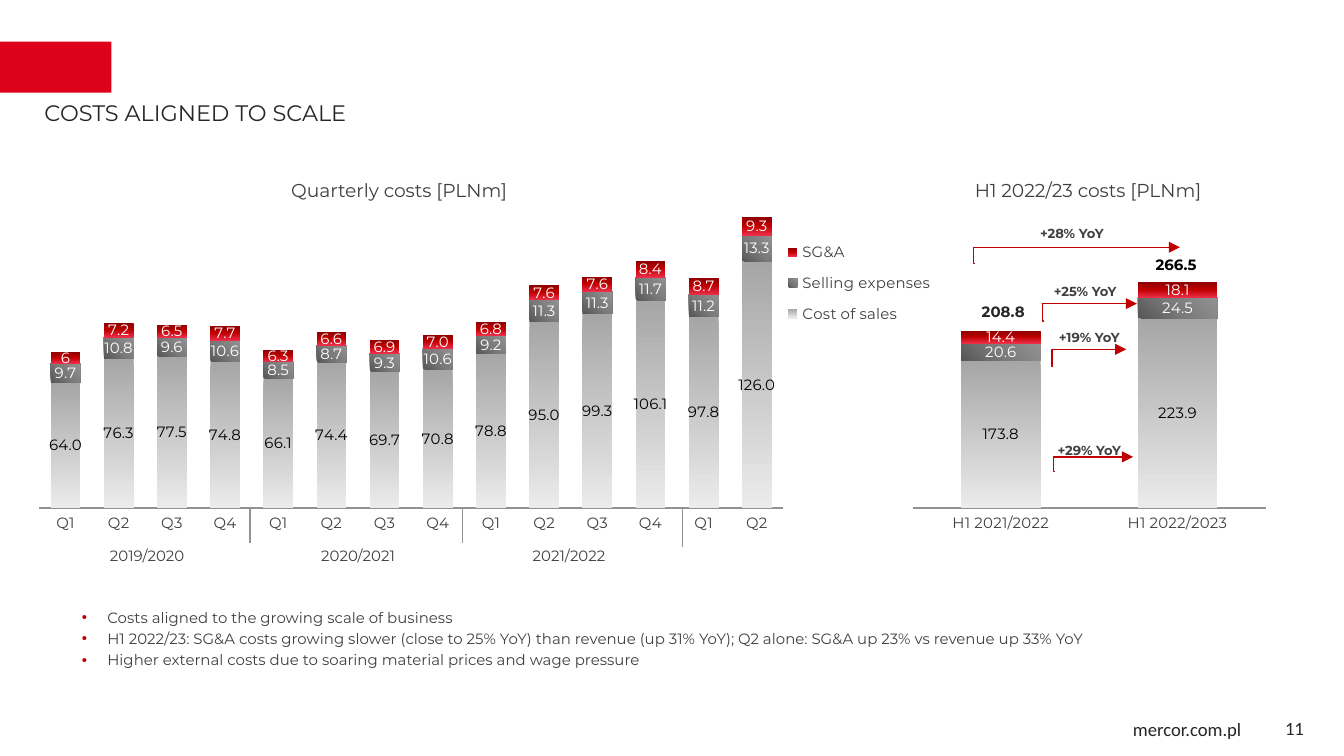
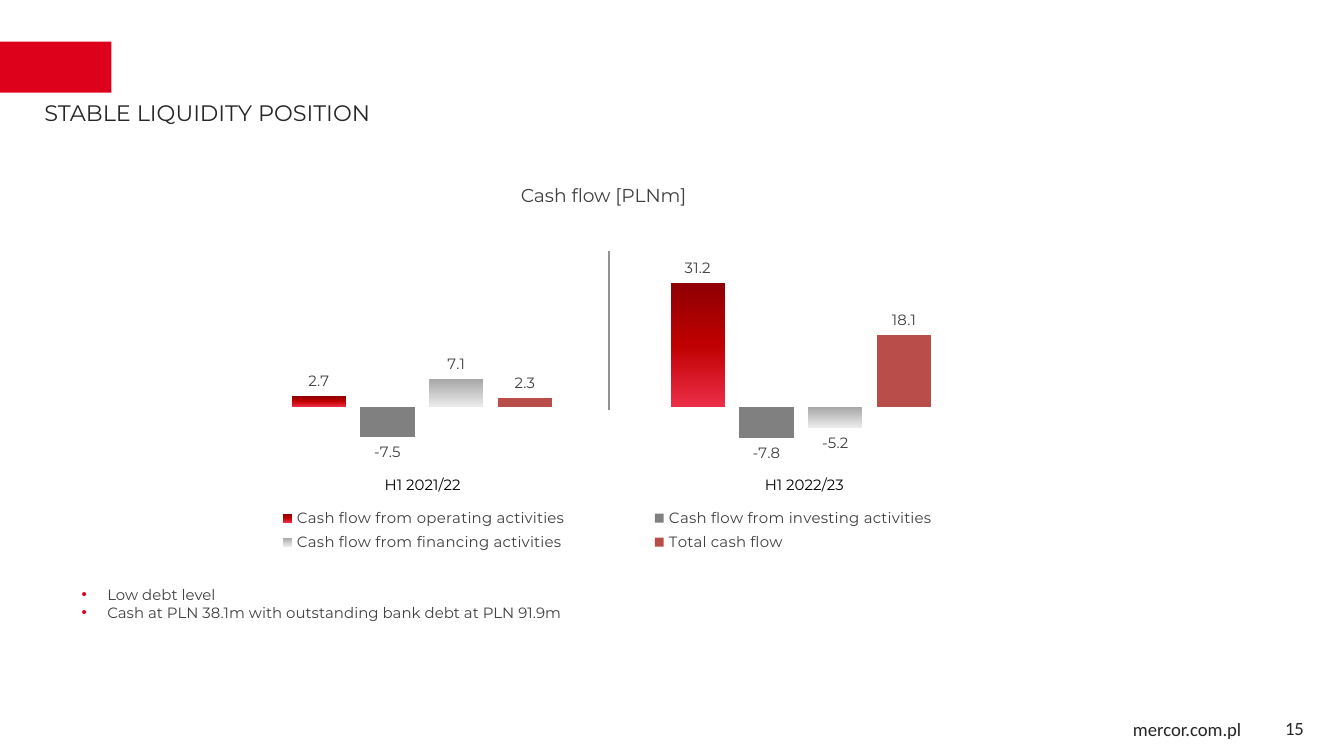
from dataclasses import dataclass

from lxml import etree
from pptx import Presentation
from pptx.chart.data import CategoryChartData
from pptx.dml.color import RGBColor
from pptx.enum.chart import XL_CHART_TYPE, XL_LABEL_POSITION, XL_LEGEND_POSITION, XL_TICK_LABEL_POSITION, XL_TICK_MARK
from pptx.enum.shapes import MSO_CONNECTOR, MSO_SHAPE
from pptx.enum.text import MSO_ANCHOR, MSO_AUTO_SIZE, PP_ALIGN
from pptx.oxml.ns import qn
from pptx.util import Pt

PX = 9144
STACKED = XL_CHART_TYPE.COLUMN_STACKED
CLUSTERED = XL_CHART_TYPE.COLUMN_CLUSTERED
LEGEND_RIGHT = XL_LEGEND_POSITION.RIGHT
LEGEND_BOTTOM = XL_LEGEND_POSITION.BOTTOM
OUTSIDE_END = XL_LABEL_POSITION.OUTSIDE_END
NEXT_TO_AXIS = XL_TICK_LABEL_POSITION.NEXT_TO_AXIS
NO_TICKS = XL_TICK_MARK.NONE
STRAIGHT = MSO_CONNECTOR.STRAIGHT
ELBOW = MSO_CONNECTOR.ELBOW
RECTANGLE = MSO_SHAPE.RECTANGLE
LEFT, CENTER, RIGHT = PP_ALIGN.LEFT, PP_ALIGN.CENTER, PP_ALIGN.RIGHT
TOP, MIDDLE = MSO_ANCHOR.TOP, MSO_ANCHOR.MIDDLE
GROW = MSO_AUTO_SIZE.SHAPE_TO_FIT_TEXT


@dataclass(frozen=True)
class Theme:
    font: str = "Montserrat"
    footer_font: str = "Calibri"
    band: str = "DD011B"
    accent: str = "C00000"
    bullet: str = "E0001B"
    dark: str = "262626"
    text: str = "404040"
    black: str = "000000"
    white: str = "FFFFFF"
    axis: str = "929292"
    mid_gray: str = "808080"
    brick: str = "B94D4A"
    title: int = 12
    heading: int = 10
    body: int = 8
    small: int = 7
    line: float = 0.75
    red_gradient: tuple = (90, (0, "8E0003"), (50, "C00000"), (99, "EB2D47"))
    dark_gradient: tuple = (315, (0, "565656"), (50, "7B7B7B"), (100, "929292"))
    light_gradient: tuple = (90, (0, "A6A6A6"), (100, "EBEBEB"))


THEME = Theme()


def rgb(color):
    return RGBColor.from_string(color)


def child(parent, tag, **attrs):
    return etree.SubElement(parent, qn(tag), attrs)


def set_font(font, size, color, name=THEME.font, bold=False):
    font.size, font.name, font.bold = Pt(size), name, bold
    font.color.rgb = rgb(color)


def set_layout(parent, index, box, chart_box, inner=False):
    for old in parent.findall(qn("c:layout")):
        parent.remove(old)
    layout = etree.Element(qn("c:layout"))
    manual = child(layout, "c:manualLayout")
    if inner:
        child(manual, "c:layoutTarget", val="inner")
    child(manual, "c:xMode", val="edge")
    child(manual, "c:yMode", val="edge")
    for key, value, full in zip("xywh", box, chart_box[2:] * 2):
        child(manual, f"c:{key}", val=str(value / full))
    parent.insert(index, layout)


def fill_series(series, color):
    fill = series.format.fill
    if isinstance(color, str):
        fill.solid()
        fill.fore_color.rgb = rgb(color)
        return
    angle, *stops = color
    fill.gradient()
    grad = series._element.find(".//" + qn("a:gradFill"))
    grad.find(qn("a:lin")).set("ang", str(angle * 60000))
    stop_list = grad.find(qn("a:gsLst"))
    for old in list(stop_list):
        stop_list.remove(old)
    for position, stop_color in stops:
        stop = child(stop_list, "a:gs", pos=str(position * 1000))
        child(stop, "a:srgbClr", val=stop_color)


class Deck:
    def __init__(self, theme):
        self.theme = theme
        self.prs = Presentation()
        self.prs.slide_width = 1000 * PX
        self.prs.slide_height = self.prs.slide_width * 9 // 16
        self.s = None

    def slide(self, title, number):
        t = self.theme
        self.s = self.prs.slides.add_slide(self.prs.slide_layouts[6])
        self.rect(0, 31, 83, 38, t.band)
        self.text("mercor.com.pl", 838, 529, 182, 27, t.heading, t.dark, LEFT, font=t.footer_font, inset=5)
        self.text(str(number), 747, 527, 233, 30, t.heading, t.dark, RIGHT, font=t.footer_font, anchor=MIDDLE)
        self.text(title, 28, 69, 693, 30, t.title, t.dark, LEFT, inset=5)

    def rect(self, x, y, w, h, color):
        sp = self.s.shapes.add_shape(RECTANGLE, x * PX, y * PX, w * PX, h * PX)
        sp.shadow.inherit = False
        sp.fill.solid()
        sp.fill.fore_color.rgb = rgb(color)
        sp.line.fill.background()

    def text(self, text, x, y, w, h, size, color, align=CENTER, bold=False, font=None, inset=10, anchor=TOP):
        tf = self.s.shapes.add_textbox(x * PX, y * PX, w * PX, h * PX).text_frame
        tf.word_wrap, tf.vertical_anchor = True, anchor
        if anchor == TOP:
            tf.auto_size = GROW
        tf.margin_left = tf.margin_right = inset * PX
        tf.margin_top = tf.margin_bottom = 5 * PX
        tf.text = text
        for p in tf.paragraphs:
            p.alignment = align
            for r in p.runs:
                set_font(r.font, size, color, font or self.theme.font, bold)
        return tf

    def heading(self, text, x, y, w):
        self.text(text, x, y, w, 27, self.theme.heading, self.theme.text)

    def bullets(self, items, x, y, w, h, color, spacing=1.0):
        tf = self.text("\n".join(items), x, y, w, h, self.theme.body, self.theme.text, LEFT)
        for p in tf.paragraphs:
            p.line_spacing = spacing
            ppr = p._p.get_or_add_pPr()
            ppr.set("marL", str(19 * PX))
            ppr.set("indent", str(-19 * PX))
            child(child(ppr, "a:buClr"), "a:srgbClr", val=color)
            child(ppr, "a:buFont", typeface="Arial")
            child(ppr, "a:buChar", char="•")

    def connector(self, kind, x1, y1, x2, y2, color):
        c = self.s.shapes.add_connector(kind, x1 * PX, y1 * PX, x2 * PX, y2 * PX)
        c.line.color.rgb = rgb(color)
        c.line.width = Pt(self.theme.line)
        child(c._element.spPr, "a:effectLst")
        return c

    def divider(self, x, top, bottom):
        self.connector(STRAIGHT, x, top, x, bottom, self.theme.axis)

    def step_arrow(self, x1, y1, x2, y2):
        c = self.connector(ELBOW, x1, y1, x2, y2, self.theme.accent)
        geometry = c._element.spPr.find(qn("a:prstGeom"))
        for old in list(geometry):
            geometry.remove(old)
        child(child(geometry, "a:avLst"), "a:gd", name="adj1", fmla="val -300")
        child(c._element.spPr.find(qn("a:ln")), "a:tailEnd", type="triangle")

    def chart(self, kind, box, cats, series, plot_box, gap, overlap, scale, legend=None):
        t = self.theme
        data = CategoryChartData()
        data.categories = cats
        for name, values, *_ in series:
            data.add_series(name, values)
        chart = self.s.shapes.add_chart(kind, *(v * PX for v in box), data).chart
        set_font(chart.font, t.heading, t.black, t.footer_font)
        chart.has_title = False
        set_layout(chart.element.find(".//" + qn("c:plotArea")), 0, plot_box, box, inner=True)

        plot = chart.plots[0]
        plot.vary_by_categories = False
        plot.gap_width, plot.overlap = gap, overlap
        for ser, (_, _, color, label_color, number_format) in zip(plot.series, series):
            fill_series(ser, color)
            labels = ser.data_labels
            labels.show_value = True
            labels.number_format, labels.number_format_is_linked = number_format, False
            set_font(labels.font, t.body, label_color)
            if kind == CLUSTERED:
                labels.position = OUTSIDE_END

        axis = chart.value_axis
        axis.minimum_scale, axis.maximum_scale = scale
        axis.has_major_gridlines = False
        axis.visible = False
        axis = chart.category_axis
        axis.visible = kind == STACKED
        axis.major_tick_mark = axis.minor_tick_mark = NO_TICKS
        axis.tick_label_position = NEXT_TO_AXIS
        axis.format.line.color.rgb = rgb(t.axis)
        axis.format.line.width = Pt(t.line)
        set_font(axis.tick_labels.font, t.body, t.text)

        chart.has_legend = legend is not None
        if legend:
            position, legend_box = legend
            chart.legend.position = position
            chart.legend.include_in_layout = False
            set_font(chart.legend.font, t.body, t.text)
            set_layout(chart.element.find(".//" + qn("c:legend")), 1, legend_box, box)
        return chart


def cost_series(names, sales, selling, admin):
    t = THEME
    return [
        (names[0], sales, t.light_gradient, t.black, "0.0"),
        (names[1], selling, t.dark_gradient, t.white, "0.0"),
        (names[2], admin, t.red_gradient, t.white, "General"),
    ]


def build_costs(deck):
    t = THEME
    deck.slide("COSTS ALIGNED TO SCALE", 11)
    deck.bullets([
        "Costs aligned to the growing scale of business",
        "H1 2022/23: SG&A costs growing slower (close to 25% YoY) than revenue (up 31% YoY); "
        "Q2 alone: SG&A up 23% vs revenue up 33% YoY",
        "Higher external costs due to soaring material prices and wage pressure",
    ], 51, 445, 882, 77, t.accent, 1.2)

    quarters = ["Q1", "Q2", "Q3", "Q4"]
    chart = deck.chart(
        STACKED, (12, 139, 738, 276), quarters * 3 + quarters[:2],
        cost_series(
            ["Cost of sales", "Selling expenses", "SG&A"],
            [64, 76.3, 77.5, 74.8, 66.1, 74.4, 69.7, 70.8, 78.8, 95, 99.3, 106.1, 97.8, 126],
            [9.7, 10.8, 9.6, 10.6, 8.5, 8.7, 9.3, 10.6, 9.2, 11.3, 11.3, 11.7, 11.2, 13.3],
            [6, 7.2, 6.5, 7.7, 6.3, 6.6, 6.9, 7, 6.8, 7.6, 7.6, 8.4, 8.7, 9.3],
        ),
        (17, 6, 554, 233), 79, 100, (0, 160),
        (LEGEND_RIGHT, (550, 33, 155, 77)),
    )
    tf = chart.plots[0].series[2].points[7].data_label.text_frame
    tf.text = "7.0"
    set_font(tf.paragraphs[0].runs[0].font, t.body, t.white)

    for i, year in enumerate(["2019/2020", "2020/2021", "2021/2022"]):
        deck.text(year, 37 + 157 * i, 402, 145, 21, t.body, t.text)
    for x, bottom in [(186, 404), (344, 404), (508, 407)]:
        deck.divider(x, 378, bottom)
    deck.heading("Quarterly costs [PLNm]", 191, 128, 212)

    deck.heading("H1 2022/23 costs [PLNm]", 688, 128, 243)
    deck.chart(
        STACKED, (657, 179, 293, 220), ["H1 2021/2022", "H1 2022/2023"],
        cost_series(["Series 1", "Series 2", "Series 3"], [173.8, 223.9], [20.6, 24.5], [14.4, 18.1]),
        (22, 10, 263, 189), 122, 100, (0, 300),
    )
    for growth, x, y, w, arrow in [
        ("+29% YoY", 775, 324, 71, (784, 351, 843, 340)),
        ("+19% YoY", 775, 240, 71, (783, 273, 838, 260)),
        ("+25% YoY", 771, 206, 73, (776, 239, 846, 226)),
        ("+28% YoY", 719, 163, 157, (725, 196, 878, 184)),
    ]:
        deck.step_arrow(*arrow)
        deck.text(growth, x, y, w, 19, t.small, t.text, bold=True)
    deck.text("266.5", 850, 185, 87, 24, t.body, t.black, LEFT, bold=True)
    deck.text("208.8", 703, 220, 87, 24, t.body, t.dark, bold=True)


def build_liquidity(deck):
    t = THEME
    deck.slide("STABLE LIQUIDITY POSITION", 15)
    flows = [
        ("Cash flow from operating activities", [2.7, 31.2], t.red_gradient),
        ("Cash flow from investing activities", [-7.5, -7.8], t.mid_gray),
        ("Cash flow from financing activities", [7.1, -5.2], t.light_gradient),
        ("Total cash flow", [2.3, 18.1], t.brick),
    ]
    deck.chart(
        CLUSTERED, (112, 140, 829, 299), ["1", "2"],
        [(*flow, t.text, "General") for flow in flows],
        (61, 15, 564, 266), 219, -27, (-40, 50),
        (LEGEND_BOTTOM, (35, 235, 610, 39)),
    )
    deck.divider(453, 187, 305)
    deck.heading("Cash flow [PLNm]", 335, 132, 228)
    deck.bullets([
        "Low debt level",
        "Cash at PLN 38.1m with outstanding bank debt at PLN 91.9m",
    ], 51, 431, 877, 37, t.bullet)
    for period, x in [("H1 2021/22", 232), ("H1 2022/23", 516)]:
        deck.text(period, x, 349, 165, 24, t.body, t.black)


def main():
    deck = Deck(THEME)
    build_costs(deck)
    build_liquidity(deck)
    deck.prs.save("out.pptx")


if __name__ == "__main__":
    main()
